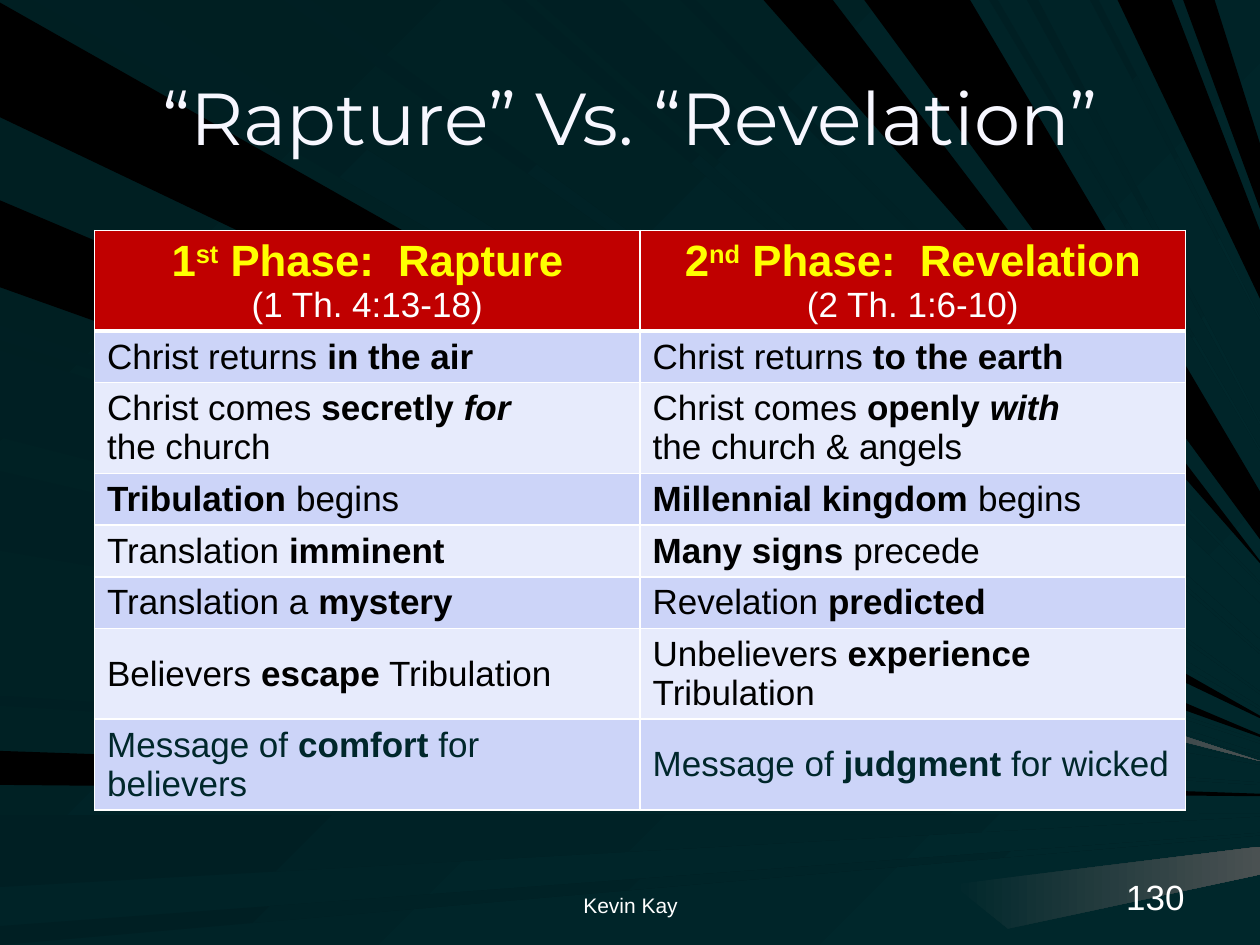
import pptx
import pptx.dml.color
import pptx.enum.text
import pptx.oxml
import pptx.oxml.ns
import pptx.util

PX = 9144
WIDTH, HEIGHT = 1000, 750
ALIGN = pptx.enum.text.PP_ALIGN
ANCHOR = pptx.enum.text.MSO_ANCHOR
TEAL, DEEP, BLACK, WHITE = "00272B", "001F23", "000000", "FFFFFF"

RAYS = [
    ("left", BLACK, 2, 93, 569),
    ("top", DEEP, 26, 101, 562),
    ("left", BLACK, 596, 623, 631),
    ("left", DEEP, 647, 704, 647),
    ("left", DEEP, 735, 750, 662),
    ("left", DEEP, 258, 270, 589),
    ("left", BLACK, 159, 228, 584),
    ("top", DEEP, 398, 416, 518),
    ("top", DEEP, 426, 492, 493),
    ("top", DEEP, 540, 552, 463),
    ("top", BLACK, 606, 661, 446),
    ("top", BLACK, 887, 930, 210),
    ("top", BLACK, 939, 964, 140),
    ("left", DEEP, 278, 342, 599),
    ("left", DEEP, 374, 437, 606),
    ("left", DEEP, 552, 560, 622),
    ("top", DEEP, 225, 247, 550),
    ("top", BLACK, 686, 770, 409),
    ("top", DEEP, 785, 792, 357),
    ("top", DEEP, 815, 824, 336),
    ("top", DEEP, 865, 872, 253),
    ("left", DEEP, 283, 347, 603),
]
TIP_WIDTHS = {210: 54, 140: 53, 409: 38, 493: 28}
GLINTS = [
    [(637, 485), (633, 511), (WIDTH, 604)],
    [(756, 702), (800, 737), (WIDTH, 694), (WIDTH, 672)],
]

PLAIN, BOLD, BOLD_ITALIC = {}, {"bold": True}, {"bold": True, "italic": True}
PHASE = {"size": 25, "color": "FFFF00", "bold": True}
ORDINAL = {**PHASE, "raised": True}
VERSE = {"color": WHITE}
MESSAGE, MESSAGE_BOLD = {"color": TEAL}, {"color": TEAL, "bold": True}

COMPARISON = [
    ([("1", PHASE), ("st", ORDINAL), (" Phase:  Rapture\n", PHASE), ("(1 Th. 4:13-18)", VERSE)],
     [("2", PHASE), ("nd", ORDINAL), (" Phase:  Revelation\n", PHASE), ("(2 Th. 1:6-10)", VERSE)]),
    ([("Christ returns ", PLAIN), ("in the air", BOLD)],
     [("Christ returns ", PLAIN), ("to the earth", BOLD)]),
    ([("Christ comes ", PLAIN), ("secretly ", BOLD), ("for\n", BOLD_ITALIC), ("the church", PLAIN)],
     [("Christ comes ", PLAIN), ("openly ", BOLD), ("with\n", BOLD_ITALIC),
      ("the church & angels", PLAIN)]),
    ([("Tribulation", BOLD), (" begins", PLAIN)],
     [("Millennial kingdom ", BOLD), ("begins", PLAIN)]),
    ([("Translation ", PLAIN), ("imminent", BOLD)],
     [("Many signs ", BOLD), ("precede", PLAIN)]),
    ([("Translation a ", PLAIN), ("mystery", BOLD)],
     [("Revelation ", PLAIN), ("predicted", BOLD)]),
    ([("Believers ", PLAIN), ("escape", BOLD), (" Tribulation", PLAIN)],
     [("Unbelievers ", PLAIN), ("experience", BOLD), (" Tribulation", PLAIN)]),
    ([("Message of ", MESSAGE), ("comfort", MESSAGE_BOLD), (" for believers", MESSAGE)],
     [("Message of ", MESSAGE), ("judgment", MESSAGE_BOLD), (" for wicked", MESSAGE)]),
]
ROW_HEIGHTS = [79, 41, 72, 41, 41, 41, 72, 72]


def rgb(value):
    return pptx.dml.color.RGBColor.from_string(value)


class Deck:
    font = "Arial"
    title_font = "Montserrat"
    header_fill = "C00000"
    band_fills = ("E7EBFC", "CCD4F8")

    def __init__(self, width, height):
        self.presentation = pptx.Presentation()
        self.presentation.slide_width = width * PX
        self.presentation.slide_height = height * PX
        self.slide = self.presentation.slides.add_slide(self.presentation.slide_layouts[5])

    def paint(self, fill, start, end=None, angle=45):
        if end is None:
            fill.solid()
            fill.fore_color.rgb = rgb(start)
            return
        fill.gradient()
        fill.gradient_angle = (360 - angle) % 360
        for stop, color in zip(fill.gradient_stops, (start, end)):
            stop.color.rgb = rgb(color)

    def background(self, start, end):
        self.paint(self.slide.background.fill, start, end)

    def polygon(self, points, start, end=None, angle=45):
        builder = self.slide.shapes.build_freeform(*points[0], scale=PX)
        builder.add_line_segments(points[1:], close=True)
        shape = builder.convert_to_shape()
        shape.shadow.inherit = False
        shape.line.fill.background()
        self.paint(shape.fill, start, end, angle)

    def ray(self, edge, color, near, far, tip):
        half = TIP_WIDTHS.get(tip, 2) // 2
        base = [(0, far), (0, near)] if edge == "left" else [(near, 0), (far, 0)]
        points = base + [(WIDTH, tip - half), (WIDTH, tip + half)]
        self.polygon(points, color, None if color == BLACK else TEAL)

    def run(self, paragraph, text, size=20, color=BLACK, bold=False, italic=False,
            raised=False, font=None):
        run = paragraph.add_run()
        run.text = text.rstrip("\n")
        run.font.name = font or self.font
        run.font.size = pptx.util.Pt(size)
        run.font.bold, run.font.italic = bold, italic
        run.font.color.rgb = rgb(color)
        if raised:
            run._r.get_or_add_rPr().set("baseline", "30000")
        if text.endswith("\n"):
            paragraph.add_line_break()

    def title(self, text, left, top, width, height):
        heading = self.slide.shapes.title
        heading.left, heading.top = left * PX, top * PX
        heading.width, heading.height = width * PX, height * PX
        heading.text_frame.vertical_anchor = ANCHOR.MIDDLE
        paragraph = heading.text_frame.paragraphs[0]
        paragraph.alignment = ALIGN.CENTER
        self.run(paragraph, text, 42, "F7F7FF", font=self.title_font)

    def footer(self, text, left, width, size, alignment):
        frame = self.slide.shapes.add_textbox(
            left * PX, 683 * PX, width * PX, 50 * PX).text_frame
        frame.word_wrap = True
        frame.vertical_anchor = ANCHOR.BOTTOM
        frame.paragraphs[0].alignment = alignment
        self.run(frame.paragraphs[0], text, size, WHITE)

    def borders(self, cell, top, bottom):
        for side, points in (("L", 1), ("R", 1), ("T", top), ("B", bottom)):
            cell._tc.get_or_add_tcPr().append(pptx.oxml.parse_xml(
                f'<a:ln{side} {pptx.oxml.ns.nsdecls("a")} w="{pptx.util.Pt(points)}">'
                f'<a:solidFill><a:srgbClr val="{WHITE}"/></a:solidFill></a:ln{side}>'))

    def table(self, rows, left, top, column_width, heights):
        columns = len(rows[0])
        table = self.slide.shapes.add_table(
            len(rows), columns, left * PX, top * PX,
            columns * column_width * PX, sum(heights) * PX).table
        for column in table.columns:
            column.width = column_width * PX
        for index, (row, height) in enumerate(zip(rows, heights)):
            table.rows[index].height = height * PX
            for position, runs in enumerate(row):
                cell = table.cell(index, position)
                self.borders(cell, 3 if index == 1 else 1, 3 if index == 0 else 1)
                self.paint(cell.fill, self.band_fills[index % 2] if index else self.header_fill)
                cell.vertical_anchor = ANCHOR.MIDDLE
                paragraph = cell.text_frame.paragraphs[0]
                paragraph.alignment = ALIGN.LEFT if index else ALIGN.CENTER
                for text, style in runs:
                    self.run(paragraph, text, **style)


def main():
    deck = Deck(WIDTH, HEIGHT)
    deck.background("001F22", TEAL)
    for ray in RAYS:
        deck.ray(*ray)
    for glint in GLINTS:
        deck.polygon(glint, TEAL, "4A5152", 0)
    heading = deck.slide.shapes.title._element
    heading.getparent().append(heading)
    deck.title("“Rapture” Vs. “Revelation”", 50, 30, 900, 125)
    deck.table(COMPARISON, 75, 183, 433, ROW_HEIGHTS)
    deck.footer("130", 717, 233, 20, ALIGN.RIGHT)
    deck.footer("Kevin Kay", 342, 317, 12, ALIGN.CENTER)
    deck.presentation.save("out.pptx")


if __name__ == "__main__":
    main()
